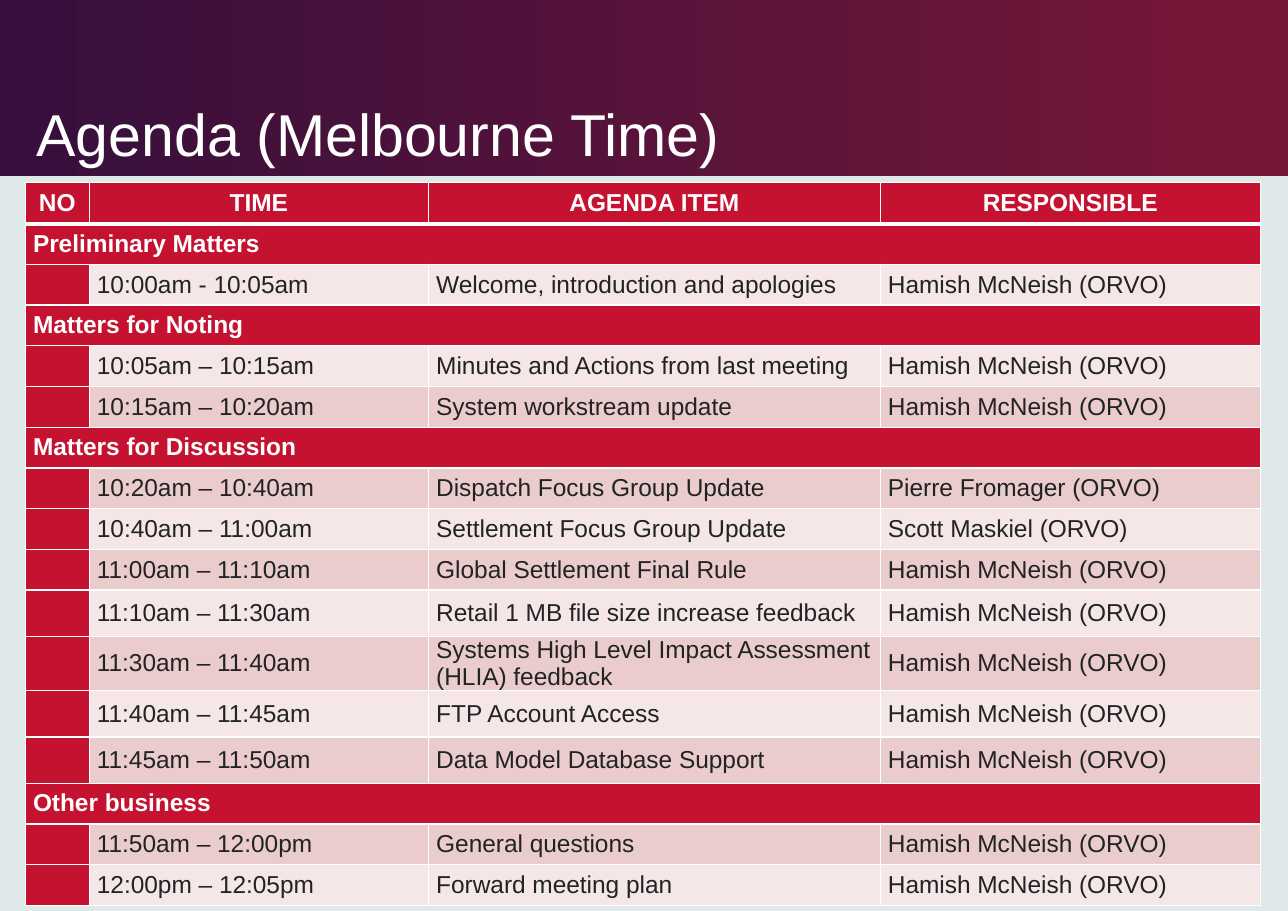
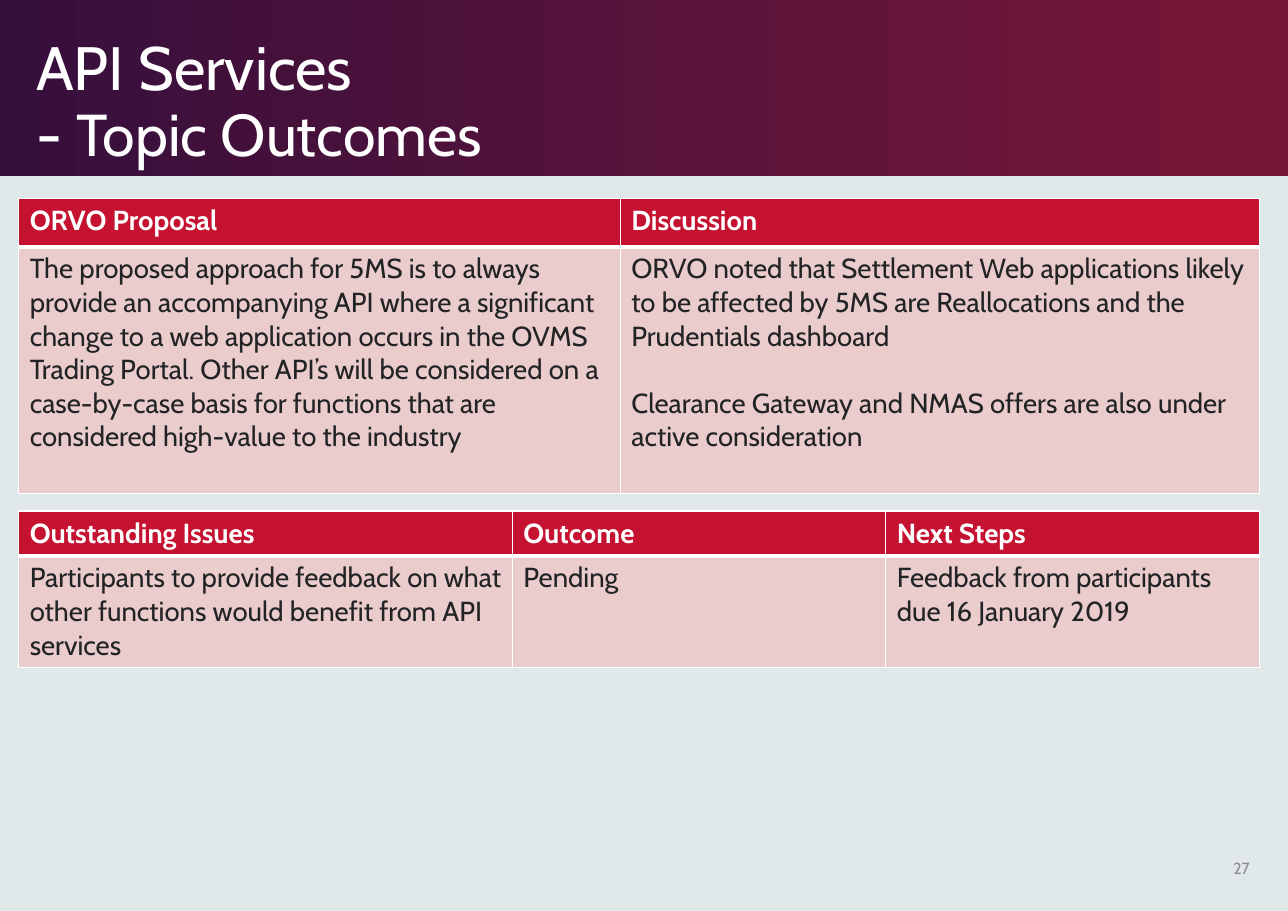
"""Build the agenda and topic outcome slides of a working group meeting."""
from lxml import etree
from pptx import Presentation
from pptx.dml.color import RGBColor
from pptx.enum.shapes import MSO_SHAPE
from pptx.enum.text import MSO_ANCHOR, MSO_AUTO_SIZE, PP_ALIGN
from pptx.oxml.ns import qn
from pptx.util import Inches, Pt

RECT = MSO_SHAPE.RECTANGLE
LEFT, MID, RIGHT = PP_ALIGN.LEFT, PP_ALIGN.CENTER, PP_ALIGN.RIGHT
TOP, CENTRE, BASE = MSO_ANCHOR.TOP, MSO_ANCHOR.MIDDLE, MSO_ANCHOR.BOTTOM
FIXED = MSO_AUTO_SIZE.NONE

WIDE, HIGH = 11.69, 8.27
HEX = {
    "back": "E0E8EA", "plum": "360F3C", "wine": "771738", "red": "C41230",
    "pale": "F5E7E8", "pink": "EACCCD", "ink": "222324", "white": "FFFFFF",
    "grey": "8D8D8E",
}
HOST = "Hamish McNeish (ORVO)"
AGENDA = [
    ("NO", "TIME", "AGENDA ITEM", "RESPONSIBLE"),
    ("Preliminary Matters",),
    ("", "10:00am - 10:05am", "Welcome, introduction and apologies", HOST),
    ("Matters for Noting",),
    ("", "10:05am – 10:15am", "Minutes and Actions from last meeting", HOST),
    ("", "10:15am – 10:20am", "System workstream update", HOST),
    ("Matters for Discussion",),
    ("", "10:20am – 10:40am", "Dispatch Focus Group Update", "Pierre Fromager (ORVO)"),
    ("", "10:40am – 11:00am", "Settlement Focus Group Update", "Scott Maskiel (ORVO)"),
    ("", "11:00am – 11:10am", "Global Settlement Final Rule", HOST),
    ("", "11:10am – 11:30am", "Retail 1 MB file size increase feedback", HOST),
    ("", "11:30am – 11:40am", "Systems High Level Impact Assessment (HLIA) feedback", HOST),
    ("", "11:40am – 11:45am", "FTP Account Access", HOST),
    ("", "11:45am – 11:50am", "Data Model Database Support", HOST),
    ("Other business",),
    ("", "11:50am – 12:00pm", "General questions", HOST),
    ("", "12:00pm – 12:05pm", "Forward meeting plan", HOST),
]
TOPIC = [
    ("ORVO Proposal", "Discussion"),
    ("The proposed approach for 5MS is to always provide an accompanying API "
     "where a significant change to a web application occurs in the OVMS "
     "Trading Portal. Other API’s will be considered on a case-by-case basis "
     "for functions that are considered high-value to the industry",
     "ORVO noted that Settlement Web applications likely to be affected by "
     "5MS are Reallocations and the Prudentials dashboard\n"
     "Clearance Gateway and NMAS offers are also under active consideration"),
]
STEPS = [
    ("Outstanding Issues", "Outcome", "Next Steps"),
    ("Participants to provide feedback on what other functions would benefit "
     "from API services", "Pending",
     "Feedback from participants due 16 January 2019"),
]


def tint(name):
    return RGBColor.from_string(HEX[name])


def style(para, face, size, hue, bold=False, align=LEFT):
    font = para.font
    font.name, font.size, font.bold = face, Pt(size), bold
    font.color.rgb = tint(hue)
    para.alignment = align


def set_base(deck, layout):
    """Put the background, the band and the title place on the layout."""
    layout.background.fill.solid()
    layout.background.fill.fore_color.rgb = tint("back")
    for spare in list(layout.placeholders)[1:]:
        spare.element.getparent().remove(spare.element)
    title = layout.placeholders[0]
    title.left, title.top = Inches(0.23), Inches(0.16)
    title.width, title.height = Inches(8.63), Inches(1.43)
    band = deck.slides[0].shapes.add_shape(RECT, 0, 0, deck.slide_width, Inches(1.6))
    band.shadow.inherit = False
    band.line.fill.background()
    band.fill.gradient()
    band.fill.gradient_angle = 0
    for stop, hue, spot in zip(band.fill.gradient_stops, ("plum", "wine"), (0, 0.99)):
        stop.color.rgb, stop.position = tint(hue), spot
    layout.shapes.element.insert(2, band.element)


def set_title(slide, face, lines):
    frame = slide.shapes.title.text_frame
    frame.auto_size, frame.vertical_anchor = FIXED, BASE
    frame.word_wrap = True
    para = frame.paragraphs[0]
    style(para, face, 38.6, "white")
    para.line_spacing = 0.9
    for row, parts in enumerate(lines):
        if row:
            para.add_line_break()
        for text, size in parts:
            run = para.add_run()
            run.text, run.font.size = text, Pt(size)


def add_page(slide, text):
    box = slide.shapes.add_textbox(Inches(10.89), Inches(7.66), Inches(0.55), Inches(0.44))
    frame = box.text_frame
    frame.word_wrap, frame.vertical_anchor = True, CENTRE
    frame.text = text
    style(frame.paragraphs[0], "Cabin", 10.5, "grey", align=RIGHT)


def set_edge(cell, row):
    """Draw white cell borders, thick below the header row."""
    props = cell._tc.get_or_add_tcPr()
    heavy = {"lnT": row == 1, "lnB": row == 0}
    for side in ("lnL", "lnR", "lnT", "lnB"):
        width = Pt(3 if heavy.get(side) else 1)
        line = etree.SubElement(props, qn("a:" + side), w=str(width))
        fill = etree.SubElement(line, qn("a:solidFill"))
        etree.SubElement(fill, qn("a:srgbClr"), val=HEX["white"])


def fill_cell(cell, row, text, face, size, head, dense):
    set_edge(cell, row)
    cell.fill.solid()
    cell.fill.fore_color.rgb = tint("red" if head else ("pale", "pink")[row % 2])
    cell.vertical_anchor = CENTRE if dense else TOP
    if dense:
        cell.margin_left = cell.margin_right = Inches(0.07)
        cell.margin_top = cell.margin_bottom = 0
    cell.text = text
    for rank, para in enumerate(cell.text_frame.paragraphs):
        align = MID if dense and row == 0 else LEFT
        style(para, face, size, "white" if head else "ink", head, align)
        if dense:
            para.space_before = para.space_after = Pt(1)
        elif rank:
            para.space_before = Pt(22)


def add_grid(slide, left, top, cols, highs, data, face, size, dense=False):
    """Add a table; a row with one text spans all columns."""
    grid = slide.shapes.add_table(
        len(data), len(cols), Inches(left), Inches(top),
        Inches(sum(cols)), Inches(sum(highs))).table
    for col, width in zip(grid.columns, cols):
        col.width = Inches(width)
    for row, texts in enumerate(data):
        grid.rows[row].height = Inches(highs[row])
        span = len(texts) == 1
        for col in range(len(cols)):
            text = texts[col] if col < len(texts) else ""
            head = row == 0 or span or (dense and col == 0)
            fill_cell(grid.cell(row, col), row, text, face, size, head, dense)
        if span:
            grid.cell(row, 0).merge(grid.cell(row, len(cols) - 1))


def main():
    deck = Presentation()
    deck.slide_width, deck.slide_height = Inches(WIDE), Inches(HIGH)
    layout = deck.slide_layouts[5]
    plan, topic = [deck.slides.add_slide(layout) for _ in range(2)]
    set_base(deck, layout)

    set_title(plan, "Arial", [[("Agenda (Melbourne Time)", 38.6)]])
    highs = [0.37] * 10 + [0.42, 0.49, 0.42, 0.42] + [0.37] * 3
    add_grid(plan, 0.23, 1.66, [0.58, 3.08, 4.1, 3.45], highs, AGENDA, "Arial", 16, True)

    set_title(topic, "Cabin", [[("API Services", 40)], [("- ", 40), ("Topic Outcomes", 38.6)]])
    add_grid(topic, 0.17, 1.8, [5.46, 5.8], [0.44, 2.24], TOPIC, "Cabin", 18)
    add_grid(topic, 0.17, 4.64, [4.48, 3.39, 3.39], [0.4, 1.01], STEPS, "Cabin", 18)
    add_page(topic, "27")
    deck.save("out.pptx")


if __name__ == "__main__":
    main()
